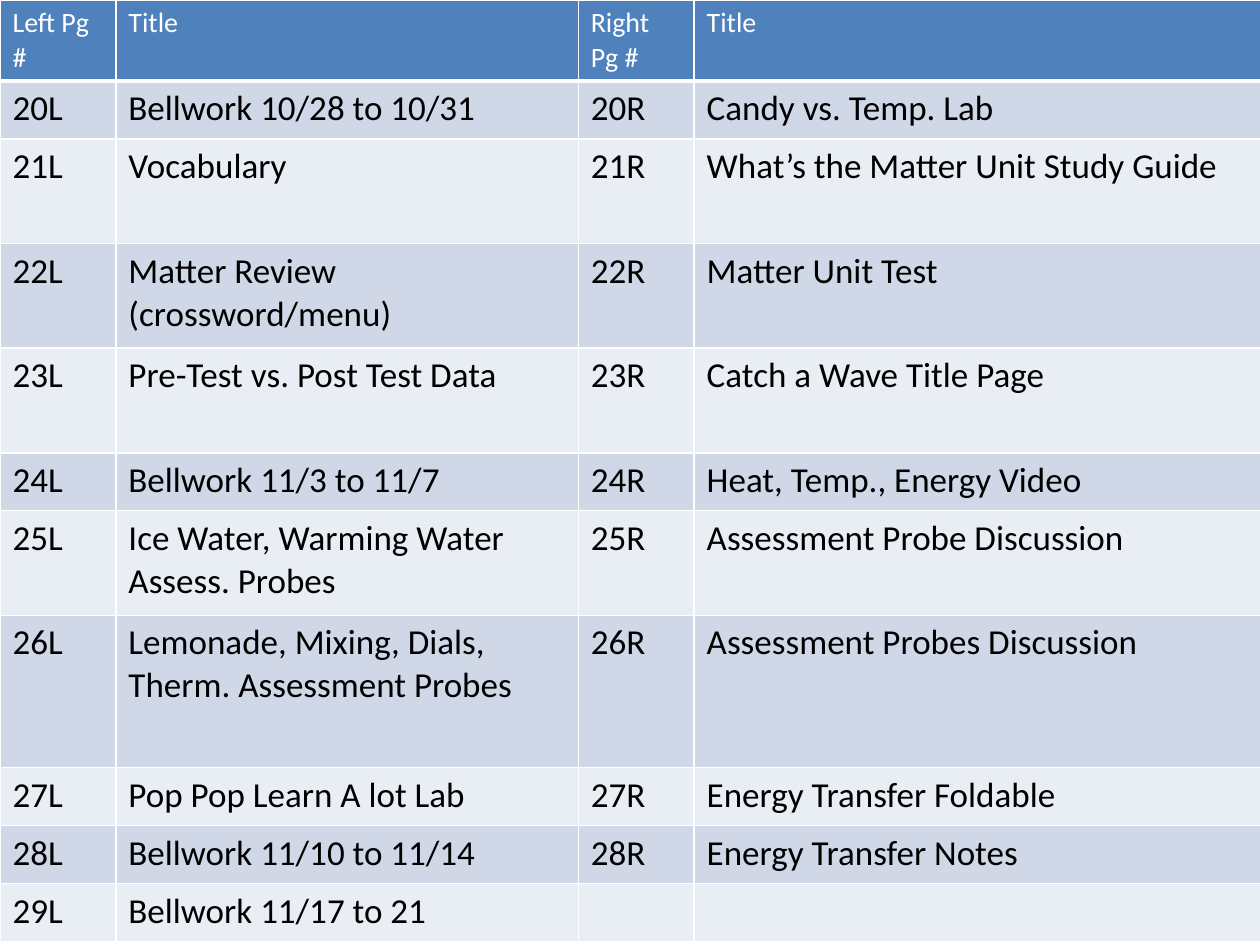
import pptx
import pptx.dml.color
import pptx.oxml
import pptx.oxml.ns
import pptx.util
from pptx.util import Inches

FONT = "Calibri"
WHITE, BLACK = "FFFFFF", "000000"
HEADER_FILL = "4F81BD"
BAND_FILLS = ("E9EDF4", "D0D8E8")  # even rows, odd rows

COLUMN_WIDTHS = (0.92, 3.67, 0.92, 4.5)
HEADER_HEIGHT, ONE_LINE, TWO_LINES, THREE_LINES = 0.64, 0.46, 0.83, 1.21

HEADINGS = ("Left Pg #", "Title", "Right Pg #", "Title")
FIRST_PAGE = 20
# Left title, right title, row height
PAGES = (
    ("Bellwork 10/28 to 10/31", "Candy vs. Temp. Lab", ONE_LINE),
    ("Vocabulary", "What’s the Matter Unit Study Guide", TWO_LINES),
    ("Matter Review (crossword/menu)", "Matter Unit Test", TWO_LINES),
    ("Pre-Test vs. Post Test Data", "Catch a Wave Title Page", TWO_LINES),
    ("Bellwork 11/3 to 11/7", "Heat, Temp., Energy Video", ONE_LINE),
    ("Ice Water, Warming Water Assess. Probes", "Assessment Probe Discussion", TWO_LINES),
    ("Lemonade, Mixing, Dials, Therm. Assessment Probes", "Assessment Probes Discussion", THREE_LINES),
    ("Pop Pop Learn A lot Lab", "Energy Transfer Foldable", ONE_LINE),
    ("Bellwork 11/10 to 11/14", "Energy Transfer Notes", ONE_LINE),
    ("Bellwork 11/17 to 21", "", ONE_LINE),
)


def rgb(hex_color):
    return pptx.dml.color.RGBColor.from_string(hex_color)


def set_borders(cell, bottom_width):
    """Draw white borders; they must come before the fill in tcPr."""
    properties = cell._tc.get_or_add_tcPr()
    widths = {"lnL": 1, "lnR": 1, "lnT": 1, "lnB": bottom_width}
    for index, (side, width) in enumerate(widths.items()):
        border = pptx.oxml.parse_xml(
            f'<a:{side} {pptx.oxml.ns.nsdecls("a")} w="{pptx.util.Pt(width)}">'
            f'<a:solidFill><a:srgbClr val="{WHITE}"/></a:solidFill></a:{side}>'
        )
        properties.insert(index, border)


def fill_row(table, row_index, texts, height, fill, color, size, bottom_width=1):
    table.rows[row_index].height = Inches(height)
    for cell, text in zip(table.rows[row_index].cells, texts):
        cell.text = text
        cell.fill.solid()
        cell.fill.fore_color.rgb = rgb(fill)
        set_borders(cell, bottom_width)
        font = cell.text_frame.paragraphs[0].font
        font.name = FONT
        font.size = pptx.util.Pt(size)
        font.bold = False
        font.color.rgb = rgb(color)


def add_contents_table(slide):
    table = slide.shapes.add_table(
        len(PAGES) + 1, len(HEADINGS), 0, 0, Inches(10), Inches(7.5)
    ).table
    table.first_row = False
    table.horz_banding = False
    for column, width in zip(table.columns, COLUMN_WIDTHS):
        column.width = Inches(width)

    # Header
    fill_row(table, 0, HEADINGS, HEADER_HEIGHT, HEADER_FILL, WHITE, 16, bottom_width=3)

    # Numbered notebook pages
    for row_index, (left, right, height) in enumerate(PAGES, start=1):
        page = FIRST_PAGE + row_index - 1
        texts = (f"{page}L", left, f"{page}R" if right else "", right)
        fill_row(table, row_index, texts, height, BAND_FILLS[row_index % 2], BLACK, 20)


def main():
    presentation = pptx.Presentation()
    presentation.slide_width = Inches(10)
    presentation.slide_height = Inches(7.5)
    slide = presentation.slides.add_slide(presentation.slide_layouts[6])
    add_contents_table(slide)
    presentation.save("out.pptx")


if __name__ == "__main__":
    main()
